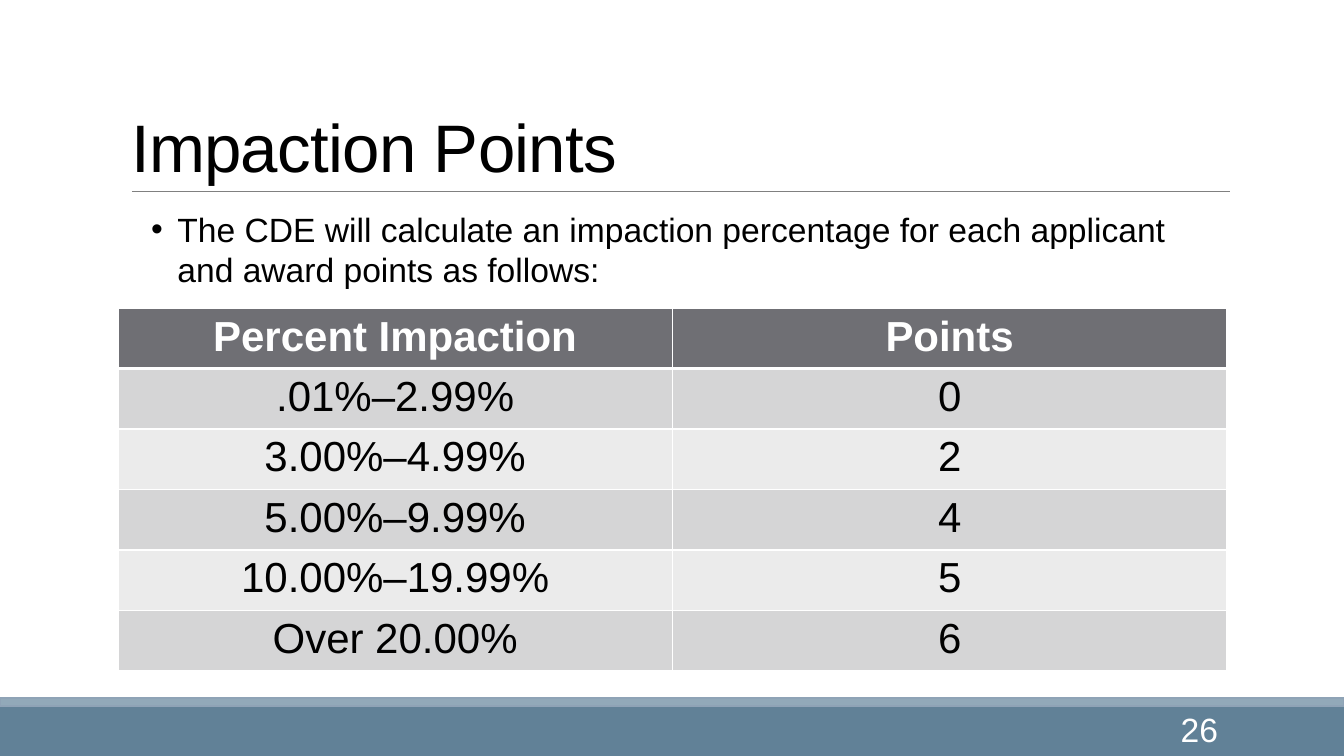
from lxml import etree
from pptx import Presentation
from pptx.dml.color import RGBColor
from pptx.enum.shapes import MSO_CONNECTOR as Connector, MSO_SHAPE as Shape
from pptx.enum.text import MSO_ANCHOR as Anchor, MSO_AUTO_SIZE as AutoSize, PP_ALIGN as Align
from pptx.oxml import parse_xml
from pptx.oxml.ns import nsdecls, qn
from pptx.util import Inches, Pt

TITLE = "Impaction Points"
INTRO = ("The CDE will calculate an impaction percentage for each applicant "
         "and award points as follows:")
POINTS_TABLE = [
    ("Percent Impaction", "Points"),
    (".01%–2.99%", "0"),
    ("3.00%–4.99%", "2"),
    ("5.00%–9.99%", "4"),
    ("10.00%–19.99%", "5"),
    ("Over 20.00%", "6"),
]
PAGE_NUMBER = "26"

FONT = "Arial"
BLACK = RGBColor(0x00, 0x00, 0x00)
WHITE = RGBColor(0xFF, 0xFF, 0xFF)
RULE_GREY = RGBColor(0x80, 0x80, 0x80)
FOOTER_BLUE = RGBColor(0x61, 0x81, 0x97)
STRIP_BLUE = RGBColor(0x92, 0xA9, 0xB9)
STRIP_EDGE = RGBColor(0x8F, 0xA3, 0xB6)
HEADER_GREY = RGBColor(0x6F, 0x6F, 0x74)
ROW_GREYS = [RGBColor(0xD5, 0xD5, 0xD6), RGBColor(0xEB, 0xEB, 0xEB)]

# Boxes in px: left, top, width, height
SLIDE_SIZE = (1344, 756)
TITLE_BOX = (121, 31, 1109, 160)
INTRO_BOX = (121, 204, 1109, 237)
TABLE_BOX = (118, 308, 1109, 363)
FOOTER_BOX = (0, 707, 1344, 50)
STRIP_BOX = (0, 698, 1344, 8)
NUMBER_BOX = (1083, 709, 145, 40)
RULE_ENDS = (132, 191, 1230, 191)
PX = Inches(1) / 100.8


def emu(*lengths):
    return [round(length * PX) for length in lengths]


def place(shape, box):
    shape.left, shape.top, shape.width, shape.height = emu(*box)


def style(paragraph, size, color, align, bold=False):
    paragraph.alignment = align
    font = paragraph.font
    font.name, font.size, font.bold = FONT, Pt(size), bold
    font.color.rgb = color


def add_band(slide, box, fill, edge=None):
    band = slide.shapes.add_shape(Shape.RECTANGLE, *emu(*box))
    band.shadow.inherit = False
    band.fill.solid()
    band.fill.fore_color.rgb = fill
    if edge is None:
        band.line.fill.background()
    else:
        band.line.color.rgb = edge
        band.line.width = Pt(1.25)


def add_rule(slide):
    rule = slide.shapes.add_connector(Connector.STRAIGHT, *emu(*RULE_ENDS))
    rule.line.color.rgb = RULE_GREY
    rule.line.width = Pt(0.5)
    etree.SubElement(rule._element.spPr, qn("a:effectLst"))


def fill_title(title):
    place(title, TITLE_BOX)
    frame = title.text_frame
    frame.auto_size = AutoSize.NONE
    frame.vertical_anchor = Anchor.BOTTOM
    frame.text = TITLE
    heading = frame.paragraphs[0]
    heading.line_spacing = 0.85
    style(heading, 48, BLACK, Align.LEFT)
    heading.runs[0]._r.get_or_add_rPr().set("spc", "-50")


def fill_intro(body):
    place(body, INTRO_BOX)
    frame = body.text_frame
    frame.auto_size = AutoSize.NONE
    frame.margin_left = frame.margin_right = Inches(0.05)
    frame.text = INTRO
    intro = frame.paragraphs[0]
    intro.space_before, intro.space_after = Pt(0), Pt(6)
    props = intro._p.get_or_add_pPr()
    props.set("marL", str(Inches(0.51)))
    props.set("indent", str(Inches(-0.26)))
    etree.SubElement(props, qn("a:buFont"), typeface=FONT)
    etree.SubElement(props, qn("a:buChar"), char="•")
    style(intro, 24, BLACK, Align.LEFT)


def add_borders(cell, top, bottom):
    """Draw white cell edges; top and bottom are widths in points."""
    props = cell._tc.get_or_add_tcPr()
    for side, width in (("L", 1), ("R", 1), ("T", top), ("B", bottom)):
        props.append(parse_xml(
            f'<a:ln{side} {nsdecls("a")} w="{Pt(width)}"><a:solidFill>'
            f'<a:srgbClr val="{WHITE}"/></a:solidFill></a:ln{side}>'))


def add_points_table(slide):
    table = slide.shapes.add_table(
        len(POINTS_TABLE), len(POINTS_TABLE[0]), *emu(*TABLE_BOX)).table
    for r, row in enumerate(POINTS_TABLE):
        header = r == 0
        for c, text in enumerate(row):
            cell = table.cell(r, c)
            add_borders(cell, top=3 if r == 1 else 1, bottom=3 if header else 1)
            cell.fill.solid()
            cell.fill.fore_color.rgb = HEADER_GREY if header else ROW_GREYS[(r - 1) % 2]
            cell.text = text
            style(cell.text_frame.paragraphs[0], 30, WHITE if header else BLACK,
                  Align.CENTER, bold=header)


def add_page_number(slide):
    frame = slide.shapes.add_textbox(*emu(*NUMBER_BOX)).text_frame
    frame.word_wrap = True
    frame.vertical_anchor = Anchor.MIDDLE
    frame.text = PAGE_NUMBER
    style(frame.paragraphs[0], 24, WHITE, Align.RIGHT)


def main():
    deck = Presentation()
    deck.slide_width, deck.slide_height = emu(*SLIDE_SIZE)
    slide = deck.slides.add_slide(deck.slide_layouts[1])
    fill_title(slide.shapes.title)
    fill_intro(slide.placeholders[1])
    add_band(slide, FOOTER_BOX, FOOTER_BLUE)
    add_band(slide, STRIP_BOX, STRIP_BLUE, STRIP_EDGE)
    add_rule(slide)
    add_points_table(slide)
    add_page_number(slide)
    deck.save("out.pptx")


if __name__ == "__main__":
    main()
